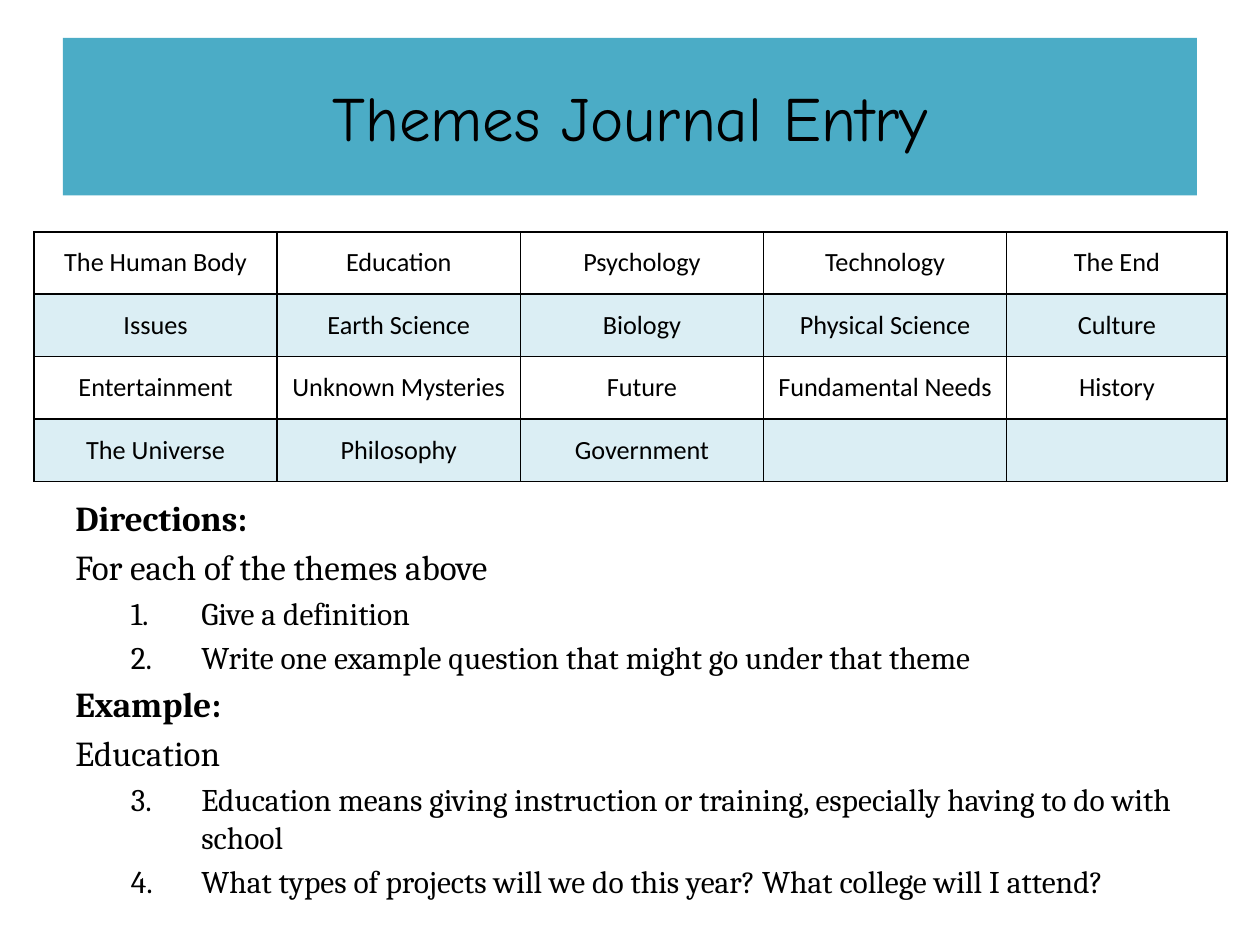
"""Build the themes journal entry slide."""
from dataclasses import dataclass
from typing import Any

import pptx
import pptx.dml.color
import pptx.enum.shapes
import pptx.enum.text
import pptx.oxml
import pptx.oxml.ns
import pptx.util

Inches = pptx.util.Inches
Pt = pptx.util.Pt
Align = pptx.enum.text.PP_ALIGN
Anchor = pptx.enum.text.MSO_ANCHOR

TEAL = pptx.dml.color.RGBColor(0x4B, 0xAC, 0xC6)
PALE = pptx.dml.color.RGBColor(0xDB, 0xEE, 0xF4)
BLACK = pptx.dml.color.RGBColor(0, 0, 0)

WIDTHS = [1.93] * 4 + [1.75]
HEIGHT = 0.495
THEMES = [
    ["The Human Body", "Education", "Psychology", "Technology", "The End"],
    ["Issues", "Earth Science", "Biology", "Physical Science", "Culture"],
    ["Entertainment", "Unknown Mysteries", "Future", "Fundamental Needs", "History"],
    ["The Universe", "Philosophy", "Government", "", ""],
]


@dataclass
class Line:
    text: str
    bold: bool = False
    start: int = 0


LINES = [
    Line("Directions:", bold=True),
    Line("For each of the themes above"),
    Line("Give a definition", start=1),
    Line("Write one example question that might go under that theme", start=1),
    Line("Example:", bold=True),
    Line("Education"),
    Line("Education means giving instruction or training, "
         "especially having to do with school", start=3),
    Line("What types of projects will we do this year? "
         "What college will I attend?", start=3),
]


def style(item: Any, values: dict[str, Any]) -> None:
    for name, value in values.items():
        setattr(item, name, value)


def write(para: Any, text: str, face: str, size: float, bold: bool = False) -> None:
    run = para.add_run()
    run.text = text
    style(run.font, {"name": face, "size": Pt(size), "bold": bold})
    run.font.color.rgb = BLACK


def number(para: Any, start: int) -> None:
    props = para._p.get_or_add_pPr()
    props.set("marL", str(Inches(1)))
    props.set("indent", str(Inches(-0.56)))
    mark = pptx.oxml.parse_xml(
        f'<a:buAutoNum {pptx.oxml.ns.nsdecls("a")} '
        f'type="arabicPeriod" startAt="{start}"/>')
    props.append(mark)


def border(cell: Any) -> None:
    props = cell._tc.get_or_add_tcPr()
    for side in "LRTB":
        props.append(pptx.oxml.parse_xml(
            f'<a:ln{side} {pptx.oxml.ns.nsdecls("a")} w="{Pt(1)}"><a:solidFill>'
            f'<a:srgbClr val="{BLACK}"/></a:solidFill></a:ln{side}>'))


def title(slide: Any) -> None:
    banner = slide.shapes.add_shape(
        pptx.enum.shapes.MSO_SHAPE.RECTANGLE,
        Inches(0.5), Inches(0.3), Inches(9), Inches(1.25))
    banner.shadow.inherit = False
    banner.fill.solid()
    banner.fill.fore_color.rgb = TEAL
    banner.line.fill.background()
    frame = banner.text_frame
    style(frame, {"word_wrap": True, "vertical_anchor": Anchor.MIDDLE})
    para = frame.paragraphs[0]
    para.alignment = Align.CENTER
    write(para, "Themes Journal Entry", "Comic Neue", 36)


def body(slide: Any) -> None:
    box = slide.shapes.add_textbox(Inches(0.5), Inches(3.89), Inches(9), Inches(3.4))
    frame = box.text_frame
    frame.word_wrap = True
    for index, line in enumerate(LINES):
        para = frame.add_paragraph() if index else frame.paragraphs[0]
        size = 18 if line.start else 20
        style(para, {"space_before": Pt(size * 0.2), "level": int(line.start > 0)})
        if line.start:
            number(para, line.start)
        write(para, line.text, "Cambria", size, line.bold)


def grid(slide: Any) -> None:
    table = slide.shapes.add_table(
        len(THEMES), len(WIDTHS), Inches(0.27), Inches(1.84),
        Inches(sum(WIDTHS)), Inches(HEIGHT * len(THEMES))).table
    style(table, {"first_row": False, "horz_banding": False})
    for column, width in zip(table.columns, WIDTHS):
        column.width = Inches(width)
    for index, (row, names) in enumerate(zip(table.rows, THEMES)):
        row.height = Inches(HEIGHT)
        for cell, name in zip(row.cells, names):
            border(cell)
            if index % 2:
                cell.fill.solid()
                cell.fill.fore_color.rgb = PALE
            else:
                cell.fill.background()
            cell.vertical_anchor = Anchor.MIDDLE
            para = cell.text_frame.paragraphs[0]
            para.alignment = Align.CENTER
            if name:
                write(para, name, "Calibri", 15)


def main() -> None:
    deck = pptx.Presentation()
    style(deck, {"slide_width": Inches(10), "slide_height": Inches(7.5)})
    slide = deck.slides.add_slide(deck.slide_layouts[6])
    title(slide)
    body(slide)
    grid(slide)
    deck.save("out.pptx")


if __name__ == "__main__":
    main()
